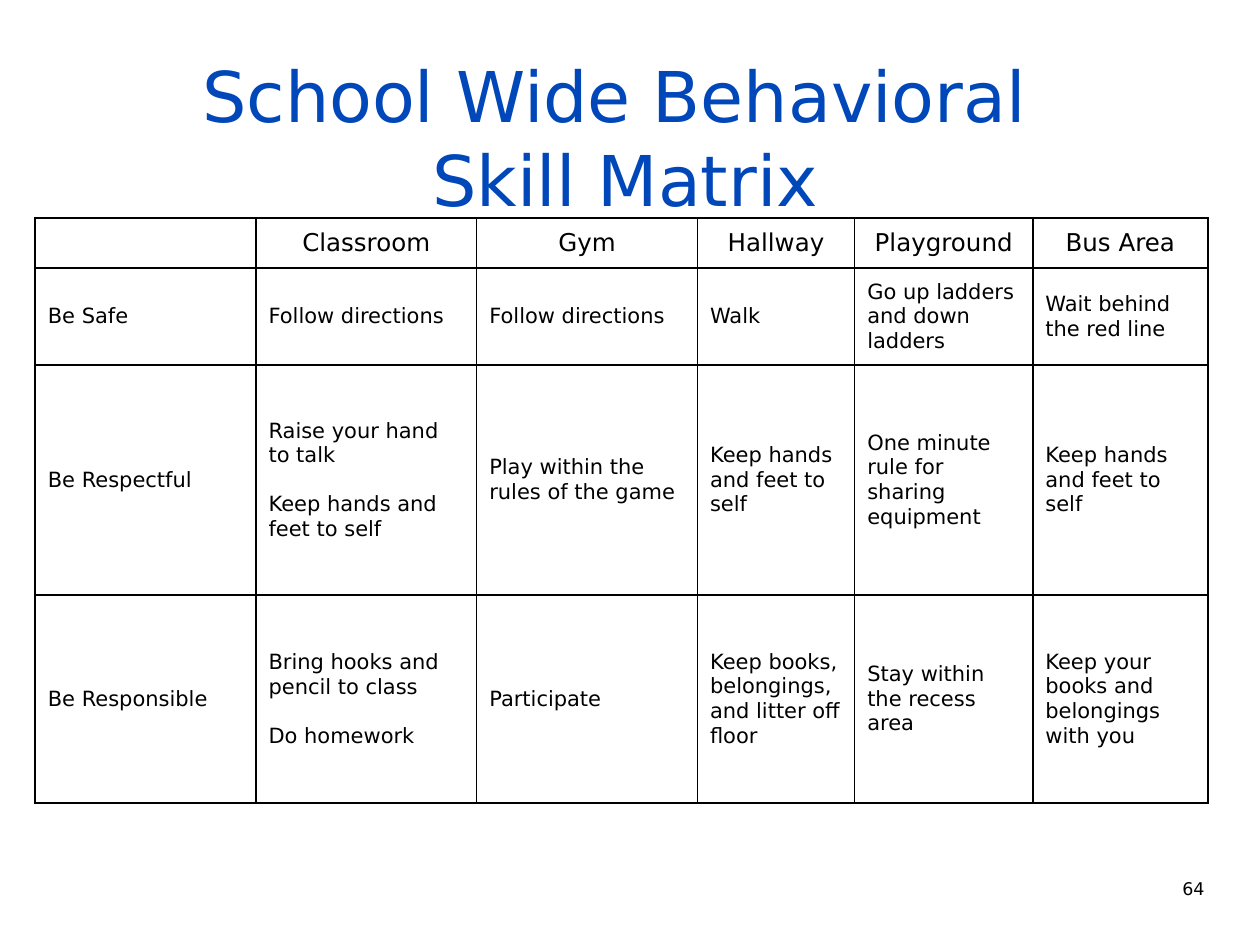
import pptx
import pptx.util
import pptx.oxml
import pptx.oxml.ns
import pptx.dml.color
import pptx.enum.text

COLORS = {"title": "0047BA", "text": "000000", "line": "000000"}
ALIGN = pptx.enum.text.PP_ALIGN
ANCHOR = pptx.enum.text.MSO_ANCHOR
Cm, Pt = pptx.util.Cm, pptx.util.Pt

HEAD = ["", "Classroom", "Gym", "Hallway", "Playground", "Bus Area"]
RULES = [
    ["Be Safe", "Follow directions", "Follow directions", "Walk",
     "Go up ladders and down ladders", "Wait behind the red line"],
    ["Be Respectful", "Raise your hand to talk\nKeep hands and feet to self",
     "Play within the rules of the game", "Keep hands and feet to self",
     "One minute rule for sharing equipment", "Keep hands and feet to self"],
    ["Be Responsible", "Bring hooks and pencil to class\nDo homework",
     "Participate", "Keep books, belongings, and litter off floor",
     "Stay within the recess area", "Keep your books and belongings with you"],
]
COLS = [4.45, 4.45, 4.45, 3.17, 3.59, 3.53]
ROWS = [0.92, 1.95, 4.64, 4.19]


class Deck:
    font = "DejaVu Sans"

    def __init__(self, wide, high):
        self.show = pptx.Presentation()
        self.show.slide_width, self.show.slide_height = Cm(wide), Cm(high)
        self.slide = self.show.slides.add_slide(self.show.slide_layouts[5])

    def fill(self, frame, text, size, align, color="text", gap=0):
        """Fill a text frame, one paragraph per line."""
        look = {"name": self.font, "size": Pt(size), "bold": False}
        frame.word_wrap = True
        for i, line in enumerate(text.split("\n")):
            para = frame.paragraphs[0] if i == 0 else frame.add_paragraph()
            para.alignment = align
            if i:
                para.space_before = Pt(gap)
            for j, part in enumerate(line.split("\v")):
                if j:
                    para.add_line_break()
                run = para.add_run()
                run.text = part
                for key, value in look.items():
                    setattr(run.font, key, value)
                run.font.color.rgb = pptx.dml.color.RGBColor.from_string(COLORS[color])

    def title(self, text, left, top, wide, high):
        shape = self.slide.shapes.title
        place = {"left": left, "top": top, "width": wide, "height": high}
        for key, value in place.items():
            setattr(shape, key, Cm(value))
        shape.text_frame.auto_size = pptx.enum.text.MSO_AUTO_SIZE.NONE
        shape.text_frame.vertical_anchor = ANCHOR.MIDDLE
        self.fill(shape.text_frame, text, 40, ALIGN.CENTER, "title")

    def label(self, text, left, top, wide, high):
        box = self.slide.shapes.add_textbox(Cm(left), Cm(top), Cm(wide), Cm(high))
        self.fill(box.text_frame, text, 10, ALIGN.RIGHT)

    def border(self, cell):
        props = cell._tc.get_or_add_tcPr()
        space = pptx.oxml.ns.nsdecls("a")
        for i, side in enumerate(("lnL", "lnR", "lnT", "lnB")):
            props.insert(i, pptx.oxml.parse_xml(
                f'<a:{side} {space} w="{Pt(1)}"><a:solidFill>'
                f'<a:srgbClr val="{COLORS["line"]}"/></a:solidFill></a:{side}>'))

    def table(self, data, cols, rows, left, top):
        grid = self.slide.shapes.add_table(
            len(rows), len(cols), Cm(left), Cm(top),
            Cm(sum(cols)), Cm(sum(rows))).table
        for flag in ("first_row", "horz_banding"):
            setattr(grid, flag, False)
        for col, wide in zip(grid.columns, cols):
            col.width = Cm(wide)
        for i, (row, high) in enumerate(zip(grid.rows, rows)):
            row.height = Cm(high)
            size, align = (12, ALIGN.LEFT) if i else (14, ALIGN.CENTER)
            for cell, text in zip(row.cells, data[i]):
                cell.fill.background()
                cell.vertical_anchor = ANCHOR.MIDDLE
                self.border(cell)
                self.fill(cell.text_frame, text, size, align, gap=14)


def main():
    deck = Deck(25.4, 19.05)
    # Heading
    deck.title("School Wide Behavioral \vSkill Matrix", 0.64, 0.84, 23.93, 3.81)
    # Page number
    deck.label("64", 19.25, 17.58, 5.28, 0.84)
    # Skill matrix
    deck.table([HEAD] + RULES, COLS, ROWS, 0.71, 4.39)
    deck.show.save("out.pptx")


if __name__ == "__main__":
    main()
